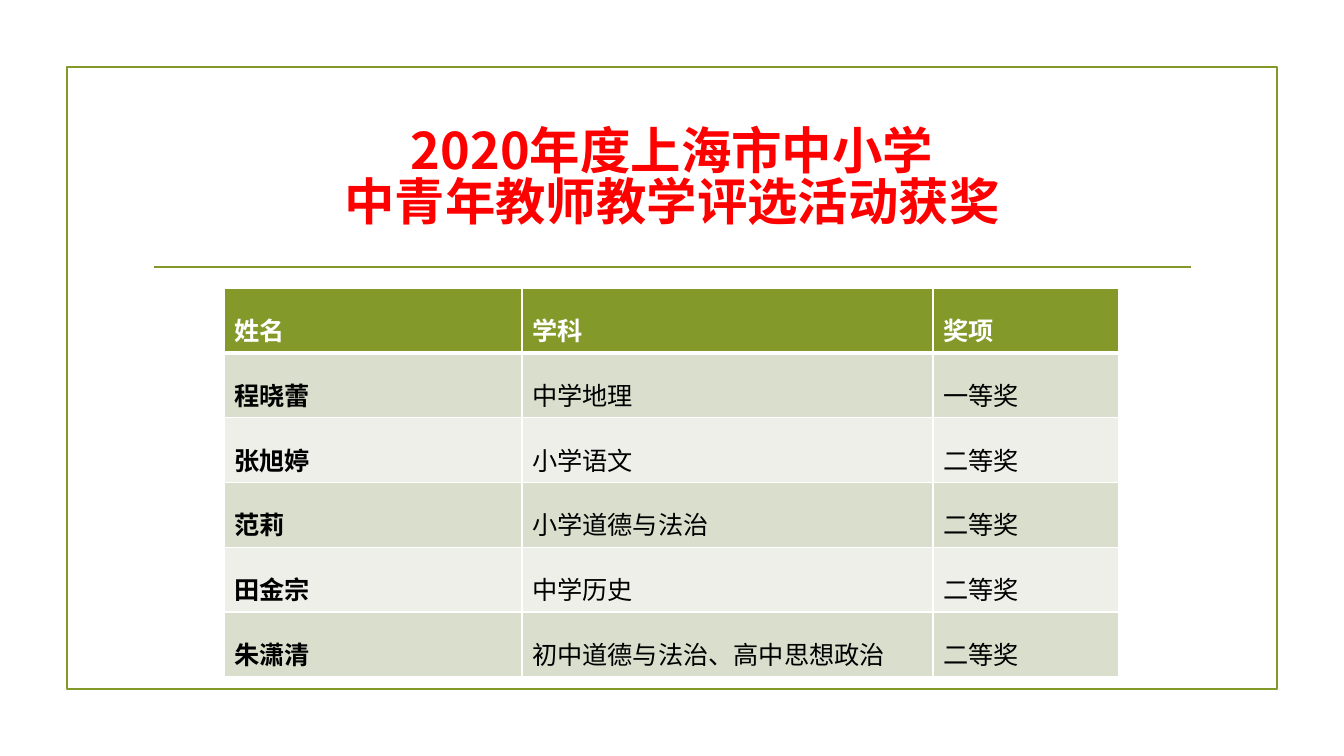
from lxml import etree
from pptx import Presentation
from pptx.dml.color import RGBColor
from pptx.enum.shapes import MSO_CONNECTOR, MSO_SHAPE
from pptx.enum.text import MSO_ANCHOR, MSO_AUTO_SIZE, PP_ALIGN
from pptx.oxml.ns import qn
from pptx.util import Emu, Pt

RECTANGLE = MSO_SHAPE.RECTANGLE
STRAIGHT = MSO_CONNECTOR.STRAIGHT
MIDDLE = MSO_ANCHOR.MIDDLE
NO_AUTOFIT = MSO_AUTO_SIZE.NONE
CENTER = PP_ALIGN.CENTER

FONT = "Noto Sans CJK SC"
GREEN = "83992A"
WHITE = "FFFFFF"
BANDS = ("D9DECD", "EDEFE8")
TITLE = "2020年度上海市中小学\v中青年教师教学评选活动获奖"
COLUMN_WIDTHS = (298, 411, 186)
ROW_HEIGHT = 41
AWARDS = (
    ("姓名", "学科", "奖项"),
    ("程晓蕾", "中学地理", "一等奖"),
    ("张旭婷", "小学语文", "二等奖"),
    ("范莉", "小学道德与法治", "二等奖"),
    ("田金宗", "中学历史", "二等奖"),
    ("朱潇清", "初中道德与法治、高中思想政治", "二等奖"),
)


def px(length):
    return Emu(round(length * 914400 / 100.8))


def color(value):
    return RGBColor.from_string(value)


def write(frame, text, size, fill, bold=False, spacing=1.0, align=None):
    frame.text = text
    para = frame.paragraphs[0]
    para.line_spacing = spacing
    para.alignment = align
    for span in para.runs:
        span.font.name = FONT
        span.font.size = Pt(size)
        span.font.bold = bold
        span.font.color.rgb = color(fill)
        east_asian = etree.SubElement(span.font._element, qn("a:ea"))
        east_asian.set("typeface", FONT)


def add_frame(page, left, top, width, height):
    box = page.shapes.add_shape(RECTANGLE, px(left), px(top), px(width), px(height))
    box.shadow.inherit = False
    box.fill.background()
    box.line.color.rgb = color(GREEN)
    box.line.width = Pt(1.25)


def add_rule(page, left, right, top):
    rule = page.shapes.add_connector(STRAIGHT, px(left), px(top), px(right), px(top))
    rule.line.color.rgb = color(GREEN)
    rule.line.width = Pt(1.25)
    etree.SubElement(rule._element.spPr, qn("a:effectLst"))


def format_title(page, left, top, width, height):
    title = page.shapes.title
    title.left, title.top = px(left), px(top)
    title.width, title.height = px(width), px(height)
    frame = title.text_frame
    frame.auto_size = NO_AUTOFIT
    frame.word_wrap = True
    frame.vertical_anchor = MIDDLE
    write(frame, TITLE, 36, "FF0000", bold=True, spacing=0.83, align=CENTER)


def set_borders(cell, bottom):
    properties = cell._tc.get_or_add_tcPr()
    widths = {"a:lnL": 1, "a:lnR": 1, "a:lnT": 1, "a:lnB": bottom}
    for index, (side, width) in enumerate(widths.items()):
        line = etree.Element(qn(side), w=str(Pt(width)))
        fill = etree.SubElement(line, qn("a:solidFill"))
        etree.SubElement(fill, qn("a:srgbClr"), val=WHITE)
        properties.insert(index, line)


def add_awards(page, left, top):
    table = page.shapes.add_table(
        len(AWARDS), len(COLUMN_WIDTHS), px(left), px(top),
        px(sum(COLUMN_WIDTHS)), px(ROW_HEIGHT * len(AWARDS)),
    ).table
    for column, width in zip(table.columns, COLUMN_WIDTHS):
        column.width = px(width)
    for row, texts in enumerate(AWARDS):
        header = row == 0
        for column, text in enumerate(texts):
            cell = table.cell(row, column)
            cell.fill.solid()
            cell.fill.fore_color.rgb = color(GREEN if header else BANDS[(row - 1) % 2])
            set_borders(cell, bottom=3 if header else 1)
            write(cell.text_frame, text, 18, WHITE if header else "000000",
                  bold=header or column == 0, spacing=1.5)


def main():
    deck = Presentation()
    deck.slide_width, deck.slide_height = px(1344), px(756)
    page = deck.slides.add_slide(deck.slide_layouts.get_by_name("Title Only"))
    add_frame(page, 67, 67, 1210, 622)
    add_rule(page, 154, 1191, 267)
    format_title(page, 143, 108, 1058, 144)
    add_awards(page, 224, 288)
    deck.save("out.pptx")


if __name__ == "__main__":
    main()
